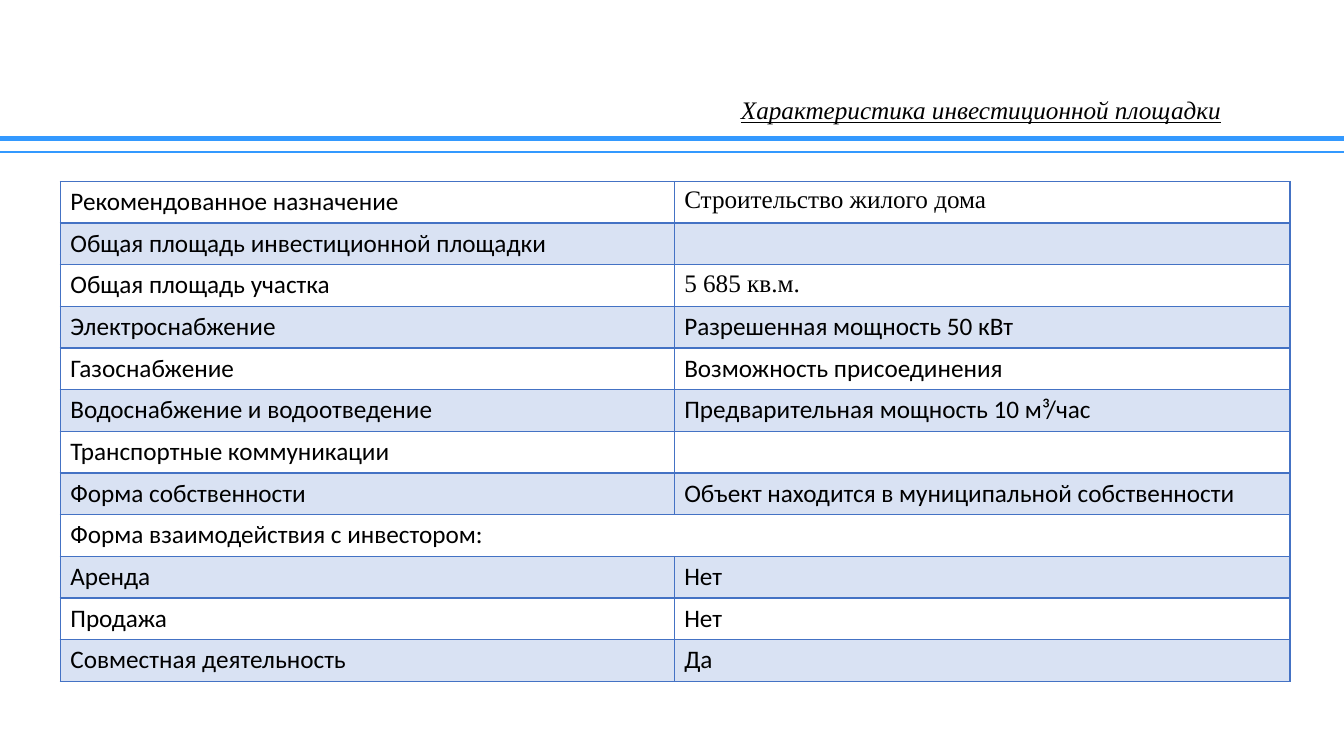
from dataclasses import dataclass

from lxml import etree
from pptx import Presentation
from pptx.dml.color import RGBColor
from pptx.enum import shapes, text
from pptx.oxml import ns
from pptx.util import Cm, Pt


@dataclass(frozen=True)
class Theme:
    ink: str = "000000"
    rule: str = "3399FF"
    grid: str = "4472C4"
    band_alpha: int = 20000
    sans: str = "Calibri"
    serif: str = "Times New Roman"
    size: int = 18


THEME = Theme()
TITLE = "Характеристика инвестиционной площадки"
# Label, value and typeface of the value; a value of None spans the row.
ROWS = [
    ("Рекомендованное назначение", "Строительство жилого дома", THEME.serif),
    ("Общая площадь инвестиционной площадки", "", THEME.sans),
    ("Общая площадь участка", "5 685 кв.м.", THEME.serif),
    ("Электроснабжение", "Разрешенная мощность 50 кВт", THEME.sans),
    ("Газоснабжение", "Возможность присоединения", THEME.sans),
    ("Водоснабжение и водоотведение", "Предварительная мощность 10 м³/час", THEME.sans),
    ("Транспортные коммуникации", "", THEME.sans),
    ("Форма собственности", "Объект находится в муниципальной собственности", THEME.sans),
    ("Форма взаимодействия с инвестором:", None, THEME.sans),
    ("Аренда", "Нет", THEME.sans),
    ("Продажа", "Нет", THEME.sans),
    ("Совместная деятельность", "Да", THEME.sans),
]


def apply(target, values):
    for name, value in values.items():
        setattr(target, name, value)


def write(frame, words, face, **style):
    para = frame.paragraphs[0]
    if words:
        span = para.add_run()
        span.text = words
        font = span.font
    else:
        font = para.font
    apply(font, {"name": face, "size": Pt(THEME.size), **style})
    font.color.rgb = RGBColor.from_string(THEME.ink)
    return para


def add_rule(page, top, width, weight):
    line = page.shapes.add_connector(shapes.MSO_CONNECTOR.STRAIGHT, 0, top, width, top)
    line.line.color.rgb = RGBColor.from_string(THEME.rule)
    line.line.width = Pt(weight)
    etree.SubElement(line._element.spPr, ns.qn("a:effectLst"))


def add_title(page):
    box = page.shapes.add_textbox(Cm(16.94), Cm(2.46), Cm(15.57), Cm(0.69))
    apply(box.text_frame, {"word_wrap": True, "vertical_anchor": text.MSO_ANCHOR.MIDDLE})
    para = write(box.text_frame, TITLE, THEME.serif, italic=True, underline=True)
    apply(para, {"alignment": text.PP_ALIGN.CENTER, "line_spacing": 0.9})


def border(cell, bottom):
    """Draw all four edges, the bottom one in its own weight."""
    properties = cell._tc.get_or_add_tcPr()
    for place, (edge, weight) in enumerate([("L", 1), ("R", 1), ("T", 1), ("B", bottom)]):
        line = etree.Element(ns.qn(f"a:ln{edge}"), w=str(Pt(weight)))
        fill = etree.SubElement(line, ns.qn("a:solidFill"))
        etree.SubElement(fill, ns.qn("a:srgbClr"), val=THEME.grid)
        properties.insert(place, line)


def shade(cell, banded):
    if not banded:
        cell.fill.background()
        return
    cell.fill.solid()
    cell.fill.fore_color.rgb = RGBColor.from_string(THEME.grid)
    colour = cell._tc.tcPr.find(f"{ns.qn('a:solidFill')}/{ns.qn('a:srgbClr')}")
    etree.SubElement(colour, ns.qn("a:alpha"), val=str(THEME.band_alpha))


def add_site_table(page):
    widths = [Cm(15.47), Cm(15.52)]
    height = Cm(1.05)
    table = page.shapes.add_table(len(ROWS), len(widths), Cm(1.52), Cm(4.57),
                                  sum(widths), height * len(ROWS)).table
    apply(table, {"first_row": False, "horz_banding": False})
    for column, width in zip(table.columns, widths):
        column.width = width
    for index, (label, value, face) in enumerate(ROWS):
        table.rows[index].height = height
        first, second = table.cell(index, 0), table.cell(index, 1)
        for cell in (first, second):
            shade(cell, index % 2 == 1)
            border(cell, 2 if index == 0 else 1)
        write(first.text_frame, label, THEME.sans)
        if value is None:
            first.merge(second)
        else:
            write(second.text_frame, value, face)


def main():
    deck = Presentation()
    apply(deck, {"slide_width": Cm(33.87), "slide_height": Cm(19.05)})
    page = deck.slides.add_slide(deck.slide_layouts[6])
    add_rule(page, Cm(3.5), deck.slide_width, 3.5)
    add_rule(page, Cm(3.82), deck.slide_width, 1.5)
    add_title(page)
    add_site_table(page)
    deck.save("out.pptx")


if __name__ == "__main__":
    main()
